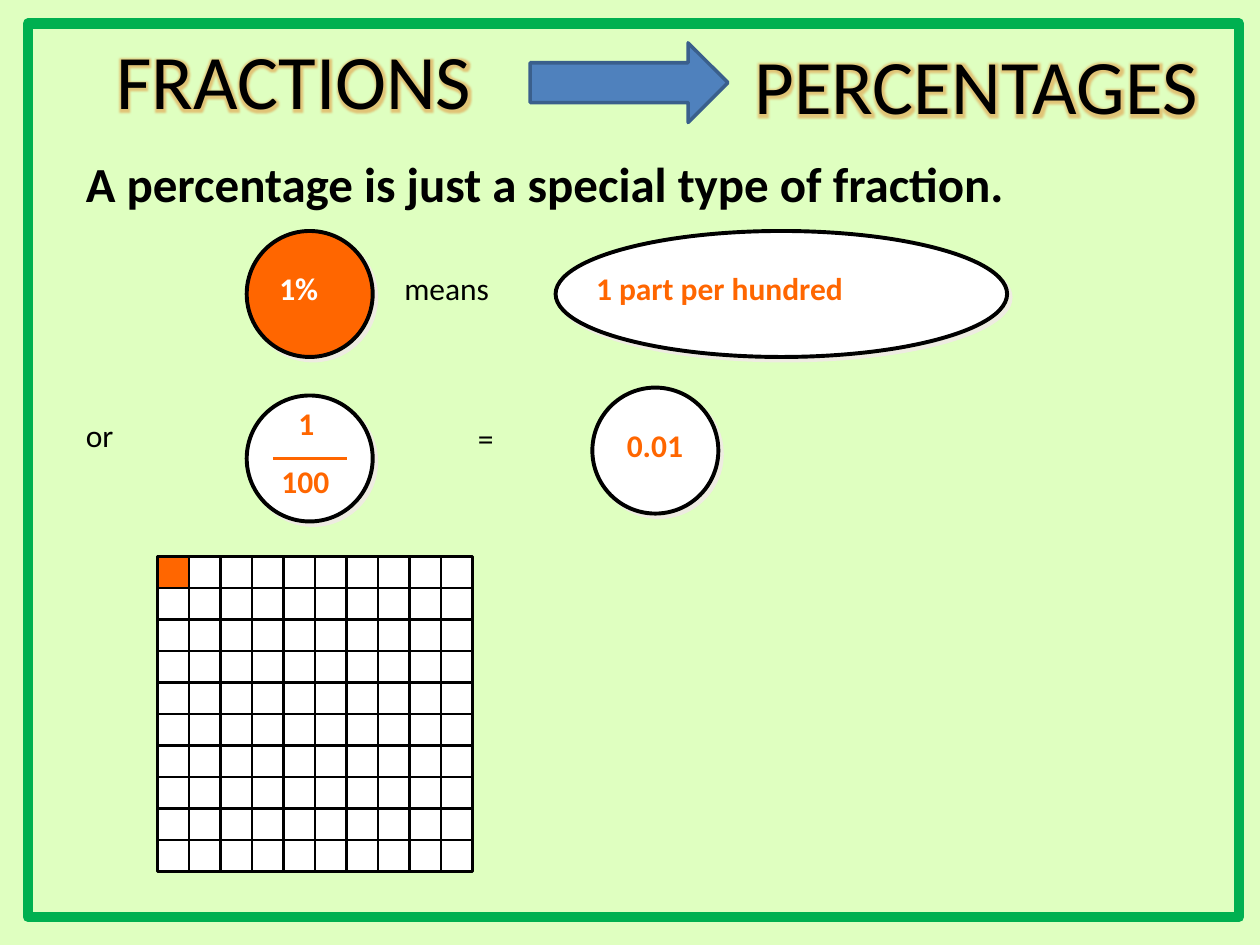
from dataclasses import dataclass

from lxml import etree
from pptx import Presentation
from pptx.dml.color import RGBColor
from pptx.enum.shapes import MSO_CONNECTOR, MSO_SHAPE
from pptx.enum.text import MSO_ANCHOR, MSO_AUTO_SIZE, PP_ALIGN
from pptx.oxml.ns import qn
from pptx.util import Pt

OVAL = MSO_SHAPE.OVAL
RECTANGLE = MSO_SHAPE.RECTANGLE
RIGHT_ARROW = MSO_SHAPE.RIGHT_ARROW
STRAIGHT = MSO_CONNECTOR.STRAIGHT
CENTER = PP_ALIGN.CENTER
LEFT = PP_ALIGN.LEFT
MIDDLE = MSO_ANCHOR.MIDDLE
TOP = MSO_ANCHOR.TOP
GROW = MSO_AUTO_SIZE.SHAPE_TO_FIT_TEXT


@dataclass(frozen=True)
class Theme:
    font: str = "Calibri"
    background: str = "DFFFC0"
    black: str = "000000"
    white: str = "FFFFFF"
    orange: str = "FF6600"
    shadow: str = "EEECE1"
    glow: str = "E46C0A"
    arrow: str = "4F81BD"
    arrow_line: str = "3A5F8C"
    frame: str = "00B050"
    heading: int = 44
    statement: int = 28
    body: int = 18


THEME = Theme()


def color(value):
    return RGBColor.from_string(value)


def add_color(parent, value, alpha=100):
    fill = etree.SubElement(parent, qn("a:srgbClr"), val=value)
    etree.SubElement(fill, qn("a:alpha"), val=str(alpha * 1000))


def add_text(shapes, text, box, ink=THEME.black, size=THEME.body, bold=False,
             wrap=False, align=LEFT, anchor=TOP):
    text_box = shapes.add_textbox(*map(Pt, box))
    frame_format = {"word_wrap": wrap, "auto_size": GROW, "vertical_anchor": anchor}
    for name, value in frame_format.items():
        setattr(text_box.text_frame, name, value)
    paragraph = text_box.text_frame.paragraphs[0]
    paragraph.alignment = align
    run = paragraph.add_run()
    run.text = text
    font_format = {"name": THEME.font, "size": Pt(size), "bold": bold}
    for name, value in font_format.items():
        setattr(run.font, name, value)
    run.font.color.rgb = color(ink)
    return run


def add_heading(shapes, text, box, **options):
    run = add_text(shapes, text, box, size=THEME.heading, wrap=True, **options)
    effects = etree.Element(qn("a:effectLst"))
    glow = etree.SubElement(effects, qn("a:glow"), rad=str(Pt(5)))
    add_color(glow, THEME.glow, 40)
    run.font.fill
    run.font._element.find(qn("a:solidFill")).addnext(effects)


def add_figure(shapes, kind, box, fill, line, width):
    shape = shapes.add_shape(kind, *map(Pt, box))
    shape.shadow.inherit = False
    if fill:
        shape.fill.solid()
        shape.fill.fore_color.rgb = color(fill)
    else:
        shape.fill.background()
    shape.line.color.rgb = color(line)
    shape.line.width = Pt(width)
    return shape


def add_bubble(slide, box, fill=THEME.white):
    shapes = slide.shapes.add_group_shape().shapes
    oval = add_figure(shapes, OVAL, box, fill, THEME.black, 2.25)
    effects = oval._element.spPr.find(qn("a:effectLst"))
    shadow = etree.SubElement(effects, qn("a:outerShdw"), dist=str(Pt(2.83)),
                              dir="2700000", algn="ctr", rotWithShape="0")
    add_color(shadow, THEME.shadow)
    return shapes


def add_fraction_bar(shapes, start, end, top):
    bar = shapes.add_connector(STRAIGHT, Pt(start), Pt(top), Pt(end), Pt(top))
    bar.line.color.rgb = color(THEME.orange)
    bar.line.width = Pt(2.25)
    etree.SubElement(bar._element.spPr, qn("a:effectLst"))


def add_hundred_grid(slide, left, top, cell, count, shaded):
    shapes = slide.shapes.add_group_shape().shapes
    for index in range(count * count):
        column, row = divmod(index, count)
        box = (left + column * cell, top + row * cell, cell, cell)
        fill = THEME.orange if index < shaded else THEME.white
        add_figure(shapes, RECTANGLE, box, fill, THEME.black, 1.5)


def add_meaning(slide):
    add_text(slide.shapes, "A percentage is just a special type of fraction.",
             (42, 84, 606, 41), size=THEME.statement, bold=True, wrap=True)
    percent = add_bubble(slide, (141, 132, 72, 72), THEME.orange)
    add_text(percent, "1%", (152.5, 150, 49, 36), THEME.white, bold=True)
    add_text(slide.shapes, "means", (224, 150, 86, 36))
    words = add_bubble(slide, (317.5, 132, 258, 72))
    add_text(words, "1 part per hundred", (333.5, 150, 226, 36), THEME.orange, bold=True)


def add_equivalents(slide):
    add_text(slide.shapes, "or", (42, 234, 36, 36))
    fraction = add_bubble(slide, (141, 226, 72, 72))
    add_fraction_bar(fraction, 156, 198, 262)
    add_text(fraction, "100", (153.75, 260.5, 42, 29), THEME.orange, bold=True)
    add_text(fraction, "1", (163.5, 227.5, 28, 36), THEME.orange, bold=True)
    add_hundred_grid(slide, 90, 318, 18, 10, 1)
    add_text(slide.shapes, "=", (266, 236, 29, 36))
    decimal = add_bubble(slide, (338.5, 221.5, 72, 72))
    add_text(decimal, "0.01", (350.75, 240, 47, 29), THEME.orange, bold=True, align=CENTER)


def add_headings(slide):
    add_heading(slide.shapes, "FRACTIONS", (31, 15, 274, 60.5), align=CENTER, anchor=MIDDLE)
    add_figure(slide.shapes, RIGHT_ARROW, (303, 24.5, 113, 45.5),
               THEME.arrow, THEME.arrow_line, 2)
    add_heading(slide.shapes, "PERCENTAGES", (424, 18, 271, 60.5))


def main():
    presentation = Presentation()
    presentation.slide_width, presentation.slide_height = Pt(720), Pt(540)
    slide = presentation.slides.add_slide(presentation.slide_layouts[6])
    slide.background.fill.solid()
    slide.background.fill.fore_color.rgb = color(THEME.background)
    add_meaning(slide)
    add_equivalents(slide)
    add_headings(slide)
    add_figure(slide.shapes, RECTANGLE, (16, 13.5, 692, 510.5), None, THEME.frame, 6)
    presentation.save("out.pptx")


if __name__ == "__main__":
    main()
